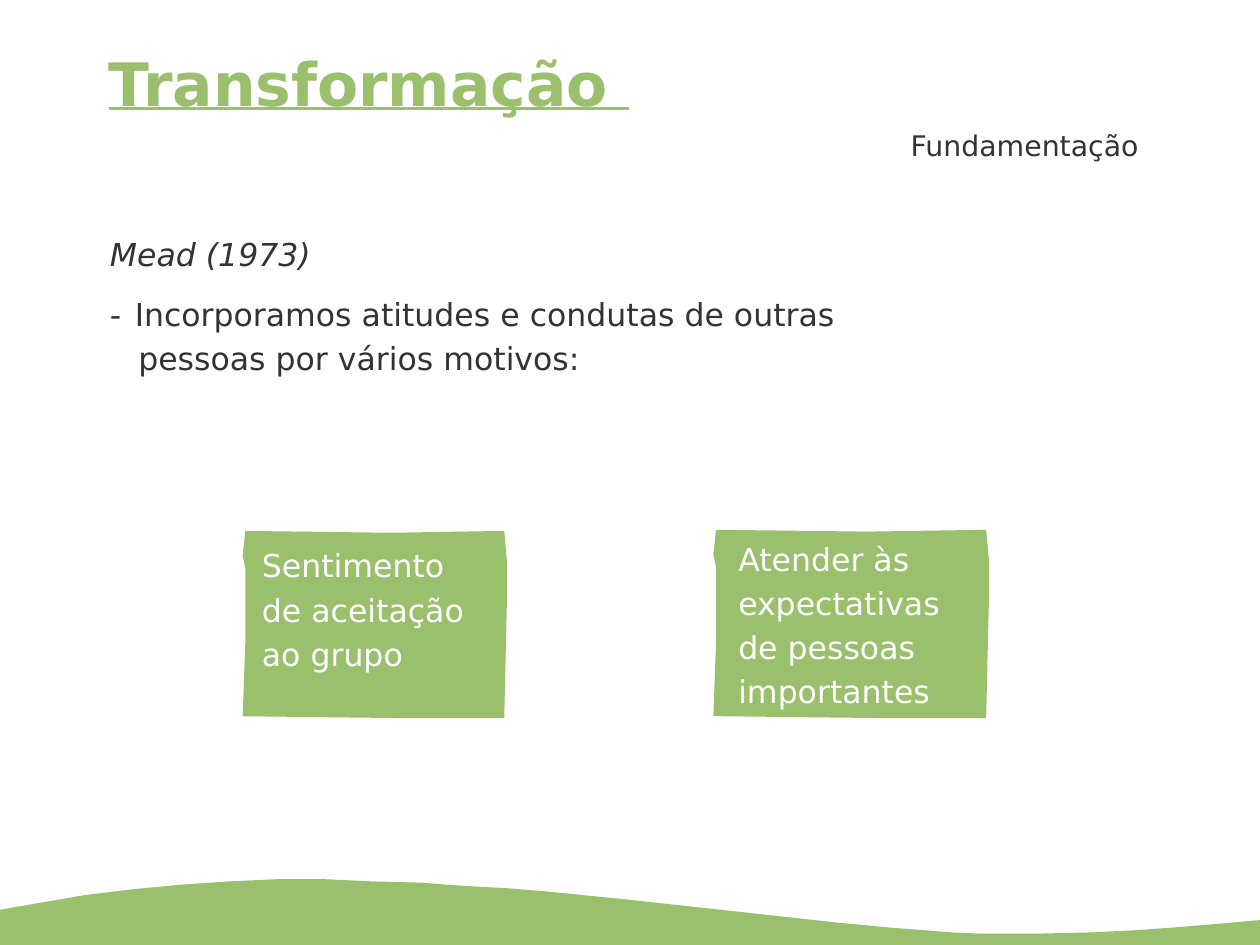
from pptx import Presentation
from pptx.dml.color import RGBColor
from pptx.enum.text import MSO_ANCHOR, PP_ALIGN
from pptx.util import Inches, Pt

TOP = MSO_ANCHOR.TOP
LEFT, RIGHT = PP_ALIGN.LEFT, PP_ALIGN.RIGHT
FONT = "DejaVu Sans"
HUES = {"green": "9BC06D", "dark": "333333", "white": "FFFFFF"}
WIDE, HIGH = 11.11, 8.33

CARD = [(0.01, 0), (0, 0.13), (0.01, 0.2), (0.01, 0.6), (0, 0.99), (0.6, 1),
        (0.99, 1), (1, 0.37), (1, 0.16), (0.99, 0), (0.56, 0.01)]
WAVE = [(0, 8.02), (0.34, 7.96), (0.75, 7.89), (1.16, 7.84), (1.58, 7.8),
        (2.01, 7.77), (2.44, 7.75), (2.87, 7.75), (3.3, 7.77), (3.7, 7.78),
        (4.1, 7.81), (4.48, 7.83), (4.84, 7.86), (5.54, 7.93), (7.36, 8.13),
        (7.89, 8.18), (8.15, 8.2), (8.4, 8.22), (8.65, 8.23), (9.13, 8.23),
        (9.59, 8.22), (10.02, 8.2), (10.42, 8.17), (10.78, 8.14),
        (WIDE, 8.11), (WIDE, HIGH), (0, HIGH)]
CARDS = [
    ((2.14, 4.68, 2.33, 1.65), (0.16, 0.08), "Sentimento de aceitação ao grupo"),
    ((6.29, 4.67, 2.43, 1.66), (0.21, 0.03),
     "Atender às expectativas de pessoas importantes"),
]


def add_free(slide, dots):
    """Draw a closed green outline through points in inches."""
    dots = [(Inches(x), Inches(y)) for x, y in dots]
    pen = slide.shapes.build_freeform(*dots[0])
    pen.add_line_segments(dots[1:], close=True)
    form = pen.convert_to_shape()
    form.shadow.inherit = False
    form.fill.solid()
    form.fill.fore_color.rgb = RGBColor.from_string(HUES["green"])
    form.line.fill.background()


def add_box(slide, box):
    """Add a wrapping text box without insets and return its frame."""
    frame = slide.shapes.add_textbox(*map(Inches, box)).text_frame
    frame.word_wrap = True
    frame.vertical_anchor = TOP
    frame.margin_left = frame.margin_right = 0
    frame.margin_top = frame.margin_bottom = 0
    return frame


def add_run(para, text, size, hue, align=LEFT):
    """Add one coloured run to a paragraph and return it."""
    para.alignment = align
    run = para.add_run()
    run.text = text
    run.font.name = FONT
    run.font.size = Pt(size)
    run.font.color.rgb = RGBColor.from_string(HUES[hue])
    return run


def add_head(slide, box):
    """Write the title with the section name at its lower right."""
    left, top, width, high = box
    para = add_box(slide, box).paragraphs[0]
    para.line_spacing = Pt(44.1)
    font = add_run(para, "Transformação ", 38, "green").font
    font.bold = font.underline = True
    note = add_box(slide, (left + width - 3.94, top + 0.7, 3.83, 0.3))
    add_run(note.paragraphs[0], "Fundamentação", 18, "dark", RIGHT)


def add_body(slide, box):
    """Write the cited author and the hanging statement."""
    frame = add_box(slide, box)
    head = frame.paragraphs[0]
    add_run(head, "Mead (1973)", 20, "dark").font.italic = True
    head._p.get_or_add_pPr().set("marL", str(Inches(0.01)))
    para = frame.add_paragraph()
    para.line_spacing = 1.17
    para.space_before = Pt(10)
    props = para._p.get_or_add_pPr()
    props.set("marL", str(Inches(0.26)))
    props.set("indent", str(Inches(-0.25)))
    dash = add_run(para, "- ", 20, "dark")
    dash._r.get_or_add_rPr().set("spc", "110")
    text = "Incorporamos atitudes e condutas de outras pessoas por vários motivos:"
    add_run(para, text, 20, "dark")


def add_card(slide, box, inset, text):
    """Draw a rough-edged card with its white text."""
    left, top, width, high = box
    add_free(slide, [(left + x * width, top + y * high) for x, y in CARD])
    x, y = inset
    frame = add_box(slide, (left + x, top + y, 1.83, 1.44))
    para = frame.paragraphs[0]
    para.line_spacing = 1.17
    para._p.get_or_add_pPr().set("marL", str(Inches(0.01)))
    add_run(para, text, 20, "white")


def main():
    """Build and save the slide."""
    deck = Presentation()
    deck.slide_width, deck.slide_height = Inches(WIDE), Inches(HIGH)
    slide = deck.slides.add_slide(deck.slide_layouts[6])
    add_free(slide, WAVE)
    add_head(slide, (0.96, 0.43, 9.19, 0.88))
    add_body(slide, (0.96, 2.07, 6.46, 1.26))
    for box, inset, text in CARDS:
        add_card(slide, box, inset, text)
    deck.save("out.pptx")


if __name__ == "__main__":
    main()
